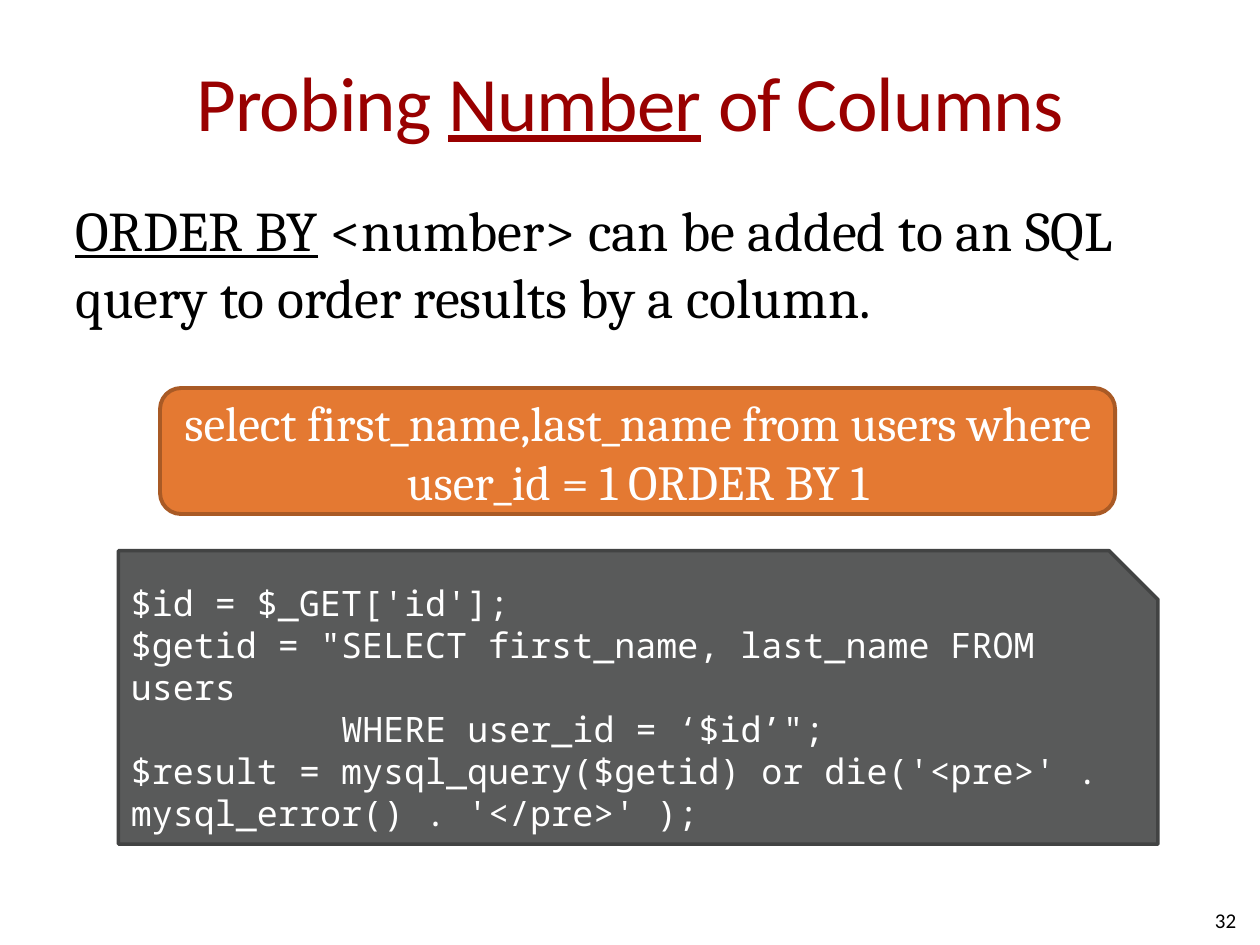
from pptx import Presentation
from pptx.dml.color import RGBColor
from pptx.enum.shapes import MSO_SHAPE as Preset
from pptx.enum.text import MSO_ANCHOR as Anchor, PP_ALIGN as Align
from pptx.oxml.ns import qn
from pptx.util import Inches, Pt
from lxml.etree import SubElement

CODE = [
    "$id = $_GET['id'];",
    "$getid = \"SELECT first_name, last_name FROM users \v\tWHERE user_id = ‘$id’\";",
    "$result = mysql_query($getid) or die('<pre>' . mysql_error() . '</pre>' );",
]


def color(hex_string):
    return RGBColor.from_string(hex_string)


class SlideBuilder:
    """Draws on one slide; boxes are (column, row, columns, rows) of a 100 x 75 grid."""

    WIDTH, HEIGHT = Inches(10), Inches(7.5)
    COLUMNS, ROWS = 100, 75
    HEADING, BODY, MONO = "Calibri", "Cambria", "Noto Sans Mono"
    RED, BLACK, WHITE = "990000", "000000", "FFFFFF"

    def __init__(self, presentation):
        presentation.slide_width, presentation.slide_height = self.WIDTH, self.HEIGHT
        self.slide = presentation.slides.add_slide(presentation.slide_layouts[6])

    def place(self, box):
        cell_width, cell_height = self.WIDTH / self.COLUMNS, self.HEIGHT / self.ROWS
        cells = (cell_width, cell_height) * 2
        return [round(count * cell) for count, cell in zip(box, cells)]

    def set_text(self, shape, paragraphs, font, size, ink, align=Align.LEFT, anchor=Anchor.TOP):
        """Fill the shape; a paragraph is a string or a list of (text, underlined) pairs."""
        frame = shape.text_frame
        frame.word_wrap = True
        frame.vertical_anchor = anchor
        for index, pieces in enumerate(paragraphs):
            paragraph = frame.add_paragraph() if index else frame.paragraphs[0]
            paragraph.alignment = align
            if isinstance(pieces, str):
                paragraph.text = pieces
            else:
                for text, underlined in pieces:
                    run = paragraph.add_run()
                    run.text = text
                    run.font.underline = underlined
            for run in paragraph.runs:
                run.font.name, run.font.size = font, Pt(size)
                run.font.color.rgb = color(ink)
        return frame

    def text(self, box, paragraphs, font, size, ink, **layout):
        text_box = self.slide.shapes.add_textbox(*self.place(box))
        return self.set_text(text_box, paragraphs, font, size, ink, **layout)

    def panel(self, preset, box, fill, line, line_width, paragraphs, font, size, **layout):
        shape = self.slide.shapes.add_shape(preset, *self.place(box))
        shape.shadow.inherit = False
        shape.fill.solid()
        shape.fill.fore_color.rgb = color(fill)
        shape.line.color.rgb = color(line)
        shape.line.width = Pt(line_width)
        return self.set_text(shape, paragraphs, font, size, self.WHITE, **layout)

    def title(self, box, pieces):
        frame = self.text(box, [pieces], self.HEADING, 44, self.RED,
                          align=Align.CENTER, anchor=Anchor.MIDDLE)
        frame.margin_left = frame.margin_right = 0
        for run in frame.paragraphs[0].runs:
            run._r.get_or_add_rPr().set("spc", "-50")

    def body(self, box, pieces):
        frame = self.text(box, [pieces], self.BODY, 32, self.BLACK)
        frame.paragraphs[0].space_before = Pt(6.4)

    def query(self, box, statement):
        self.panel(Preset.ROUNDED_RECTANGLE, box, "E47932", "A95A25", 2.25, [statement],
                   self.BODY, 28, align=Align.CENTER, anchor=Anchor.MIDDLE)

    def code(self, box, lines, indent):
        """Show source lines; a tab moves to the indent, in inches."""
        frame = self.panel(Preset.SNIP_1_RECTANGLE, box, "595A5A", "424343", 2, lines,
                           self.MONO, 20)
        for paragraph in frame.paragraphs:
            properties = paragraph._p.get_or_add_pPr()
            tab_list = SubElement(properties, qn("a:tabLst"))
            SubElement(tab_list, qn("a:tab"), pos=str(Inches(indent)), algn="l")

    def page_number(self, box, number):
        self.text(box, [number], self.HEADING, 12, self.BLACK,
                  align=Align.RIGHT, anchor=Anchor.MIDDLE)


def main():
    presentation = Presentation()
    builder = SlideBuilder(presentation)
    builder.title((5, 1.7, 90, 12.5),
                  [("Probing ", False), ("Number", True), (" of Columns", False)])
    builder.body((5, 15, 90, 52),
                 [("ORDER BY", True),
                  (" <number> can be added to an SQL query to order results by a column.", False)])
    builder.page_number((75.8, 71, 23.3, 4), "32")
    builder.query((12.7, 30.8, 75.8, 10),
                  "select first_name,last_name from users where user_id = 1 ORDER BY 1")
    builder.code((9.4, 43.7, 82.5, 23.3), CODE, indent=1.67)
    presentation.save("out.pptx")


if __name__ == "__main__":
    main()
